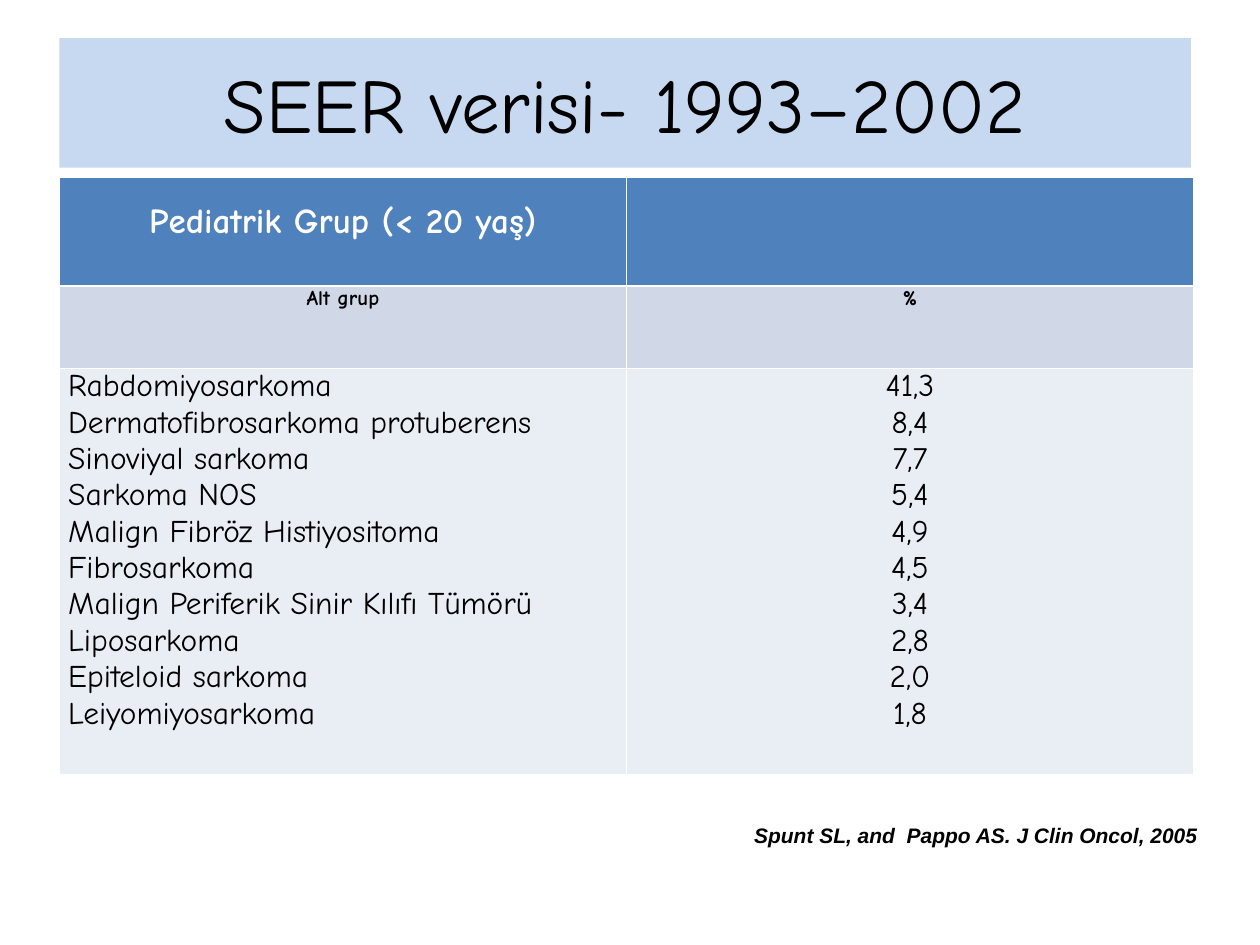
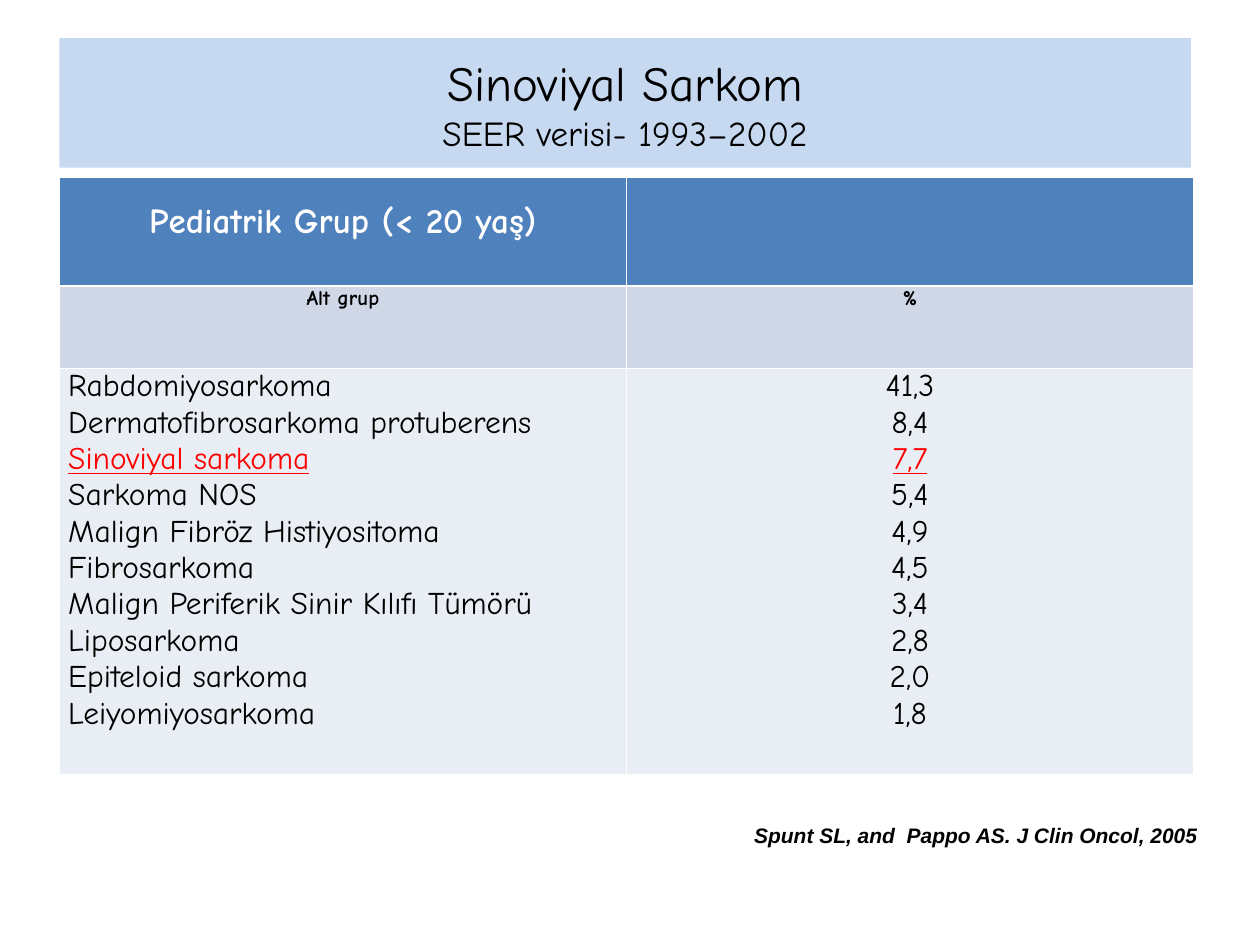
from pptx import Presentation
from pptx.dml.color import RGBColor
from pptx.enum import text as t
from pptx.util import Pt

BLACK = RGBColor(0x00, 0x00, 0x00)
WHITE = RGBColor(0xFF, 0xFF, 0xFF)
RED = RGBColor(0xFF, 0x00, 0x00)
BAND = RGBColor(0xC6, 0xD9, 0xF1)
HEAD = RGBColor(0x4F, 0x81, 0xBD)
SUB = RGBColor(0xD0, 0xD8, 0xE8)
BODY = RGBColor(0xE9, 0xED, 0xF4)
FACE = "Comic Neue"
MID = t.PP_ALIGN.CENTER
JUST = t.PP_ALIGN.JUSTIFY

SEER = "SEER verisi- 1993–2002"
CITE = "Spunt SL, and  Pappo AS. J Clin Oncol, 2005"
TUMORS = [
    ("Rabdomiyosarkoma", "41,3"),
    ("Dermatofibrosarkoma protuberens", "8,4"),
    ("Sinoviyal sarkoma", "7,7"),
    ("Sarkoma NOS", "5,4"),
    ("Malign Fibröz Histiyositoma", "4,9"),
    ("Fibrosarkoma", "4,5"),
    ("Malign Periferik Sinir Kılıfı Tümörü", "3,4"),
    ("Liposarkoma", "2,8"),
    ("Epiteloid sarkoma", "2,0"),
    ("Leiyomiyosarkoma", "1,8"),
]
NAMES, RATES = zip(*TUMORS)
ROWS = [
    (62, HEAD, [["Pediatrik Grup (< 20 yaş)"], []], 20, WHITE, True, MID),
    (47, SUB, [["Alt grup"], ["%"]], 12, BLACK, True, MID),
    (232, BODY, [NAMES, RATES], 18, BLACK, False, JUST),
]
SLIDES = [
    ([(SEER, 44)], None),
    ([("Sinoviyal Sarkom", 28), (SEER, 20)], 2),
]


def write(frame, num, line, size, color, align, bold=False, face=FACE):
    para = frame.paragraphs[0] if num == 0 else frame.add_paragraph()
    para.text = line
    para.alignment = align
    font = para.font
    font.name, font.size, font.bold = face, Pt(size), bold
    font.color.rgb = color
    return font


deck = Presentation()
deck.slide_width, deck.slide_height = Pt(720), Pt(540)

for lines, mark in SLIDES:
    slide = deck.slides.add_slide(deck.slide_layouts[5])

    title = slide.shapes.title
    title.left, title.top = Pt(34), Pt(21.75)
    title.width, title.height = Pt(646.5), Pt(74)
    title.fill.solid()
    title.fill.fore_color.rgb = BAND
    title.text_frame.vertical_anchor = t.MSO_ANCHOR.MIDDLE
    for num, (line, size) in enumerate(lines):
        write(title.text_frame, num, line, size, BLACK, MID)

    table = slide.shapes.add_table(3, 2, Pt(34), Pt(101.5), Pt(648), Pt(341)).table
    for row, (high, fill, texts, size, color, bold, align) in enumerate(ROWS):
        table.rows[row].height = Pt(high)
        for col, items in enumerate(texts):
            cell = table.cell(row, col)
            cell.fill.solid()
            cell.fill.fore_color.rgb = fill
            cell.margin_left = cell.margin_right = Pt(5)
            cell.margin_top = Pt(14 if row == 0 else 0)
            cell.margin_bottom = Pt(0)
            for num, item in enumerate(items):
                font = write(cell.text_frame, num, item, size, color,
                             MID if col else align, bold)
                if row == 2 and num == mark:
                    font.color.rgb = RED
                    font.underline = True

    cite = slide.shapes.add_textbox(Pt(422), Pt(466.5), Pt(271.5), Pt(44)).text_frame
    cite.word_wrap = False
    font = write(cite, 0, CITE, 12, BLACK, MID, True, "Arial")
    font.italic = True

deck.save("out.pptx")
